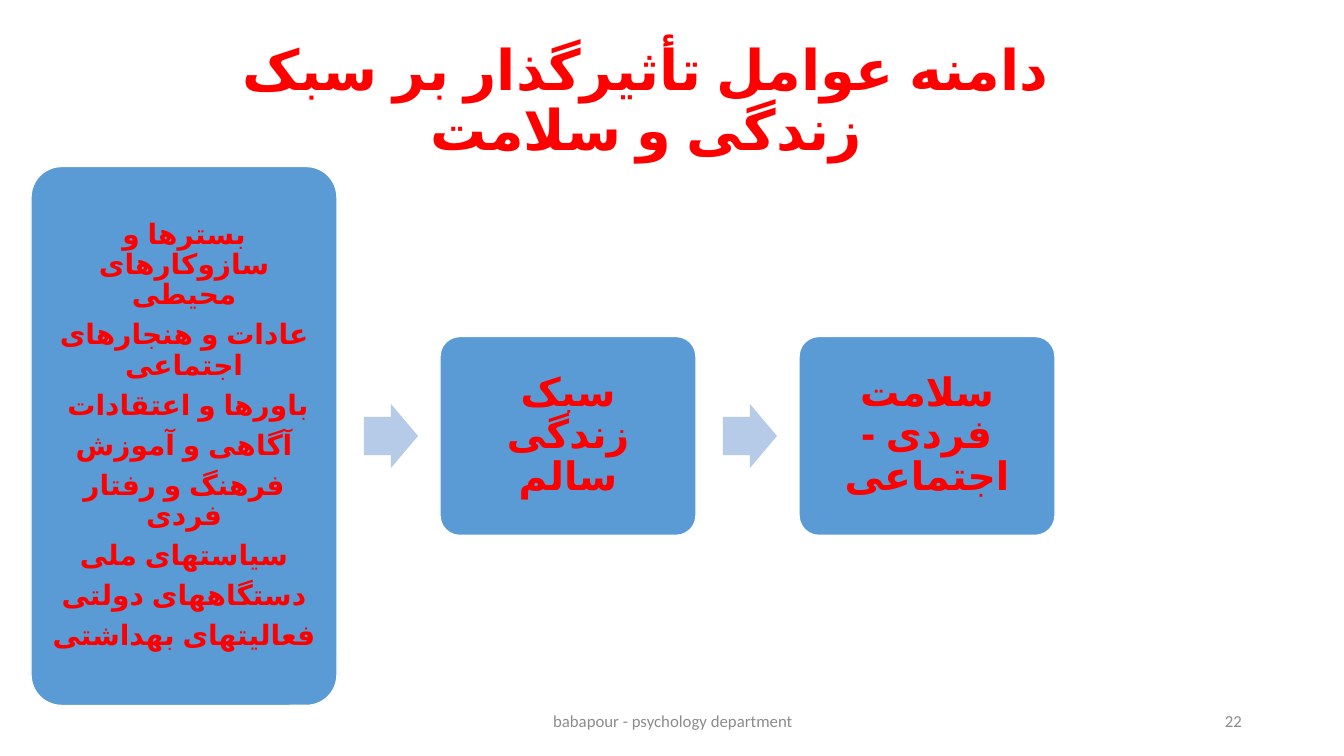
from pptx import Presentation
from pptx.dml.color import RGBColor
from pptx.enum.lang import MSO_LANGUAGE_ID
from pptx.enum.shapes import MSO_SHAPE
from pptx.enum.text import MSO_ANCHOR, PP_ALIGN
from pptx.util import Pt

ROUND, ARROW = MSO_SHAPE.ROUNDED_RECTANGLE, MSO_SHAPE.RIGHT_ARROW
MIDDLE = MSO_ANCHOR.MIDDLE
CENTER, RIGHT = PP_ALIGN.CENTER, PP_ALIGN.RIGHT
FARSI, ENGLISH = MSO_LANGUAGE_ID.FARSI, MSO_LANGUAGE_ID.ENGLISH_US

TITLE = "دامنه عوامل تأثیرگذار بر سبک زندگی و سلامت"
FACTORS = [
    "بسترها و سازوکارهای محیطی",
    "عادات و هنجارهای اجتماعی",
    "باورها و اعتقادات ",
    "آگاهی و آموزش",
    "فرهنگ و رفتار فردی",
    "سیاستهای ملی",
    "دستگاههای دولتی",
    "فعالیتهای بهداشتی",
]
STEPS = [
    dict(lines=FACTORS, wide=306, high=539, size=20, pad=8, rtl=True),
    dict(lines=["سبک زندگی سالم"], wide=256, high=199, size=28, pad=12, rtl=False),
    dict(lines=["سلامت فردی - اجتماعی"], wide=256, high=199, size=28, pad=12, rtl=False),
]
FOOTER = "babapour - psychology department"
NUMBER = "22"

FONT = "Calibri"
COLORS = dict(red="FF0000", card="5B9BD5", edge="FFFFFF", arrow="B5CBE7", gray="8C8C8C")
LEFT, MID, GAP = 31, 436, 103
ARROW_GAP, ARROW_W, ARROW_H = 27, 54, 64


def px(n):
    return round(n * 914400 / 100.8)


def color(name):
    return RGBColor.from_string(COLORS[name])


def write(shape, lines, size=12, tint="red", bold=True, align=CENTER,
          rtl=False, pad=(10, 5), lead=0.9, after=0, lang=FARSI):
    frame = shape.text_frame
    frame.word_wrap = True
    frame.vertical_anchor = MIDDLE
    frame.margin_left = frame.margin_right = px(pad[0])
    frame.margin_top = frame.margin_bottom = px(pad[1])
    for i, line in enumerate(lines):
        para = frame.add_paragraph() if i else frame.paragraphs[0]
        para.alignment = align
        para.line_spacing = lead
        para.space_before = Pt(0)
        para.space_after = Pt(after)
        if rtl:
            para._p.get_or_add_pPr().set("rtl", "1")
        run = para.add_run()
        run.text = line
        font = run.font
        font.size, font.bold, font.name = Pt(size), bold, FONT
        font.language_id = lang
        font.color.rgb = color(tint)


def draw(shapes, kind, box, fill, adjust):
    shape = shapes.add_shape(kind, *map(px, box))
    shape.shadow.inherit = False
    shape.fill.solid()
    shape.fill.fore_color.rgb = color(fill)
    for i, value in enumerate(adjust):
        shape.adjustments[i] = value
    return shape


def main():
    deck = Presentation()
    deck.slide_width, deck.slide_height = px(1344), px(756)
    shapes = deck.slides.add_slide(deck.slide_layouts[6]).shapes

    title = shapes.add_textbox(*map(px, (172, 53, 948, 99)))
    write(title, [TITLE], size=40, rtl=True)

    left = LEFT
    for i, step in enumerate(STEPS):
        if i:
            box = (left - GAP + ARROW_GAP, MID - ARROW_H / 2, ARROW_W, ARROW_H)
            arrow = draw(shapes, ARROW, box, "arrow", (0.6, 0.5))
            arrow.line.fill.background()
        wide, high, size, pad = step["wide"], step["high"], step["size"], step["pad"]
        card = draw(shapes, ROUND, (left, MID - high / 2, wide, high), "card", (0.1,))
        card.line.color.rgb = color("edge")
        card.line.width = Pt(1)
        write(card, step["lines"], size=size, rtl=step["rtl"],
              pad=(pad, pad), after=round(size * 0.35))
        left += wide + GAP

    for text, x, wide, align in ((FOOTER, 446, 454, CENTER), (NUMBER, 950, 302, RIGHT)):
        note = shapes.add_textbox(*map(px, (x, 701, wide, 40)))
        write(note, [text], tint="gray", bold=False, align=align, lead=1.0, lang=ENGLISH)

    deck.save("out.pptx")


if __name__ == "__main__":
    main()
